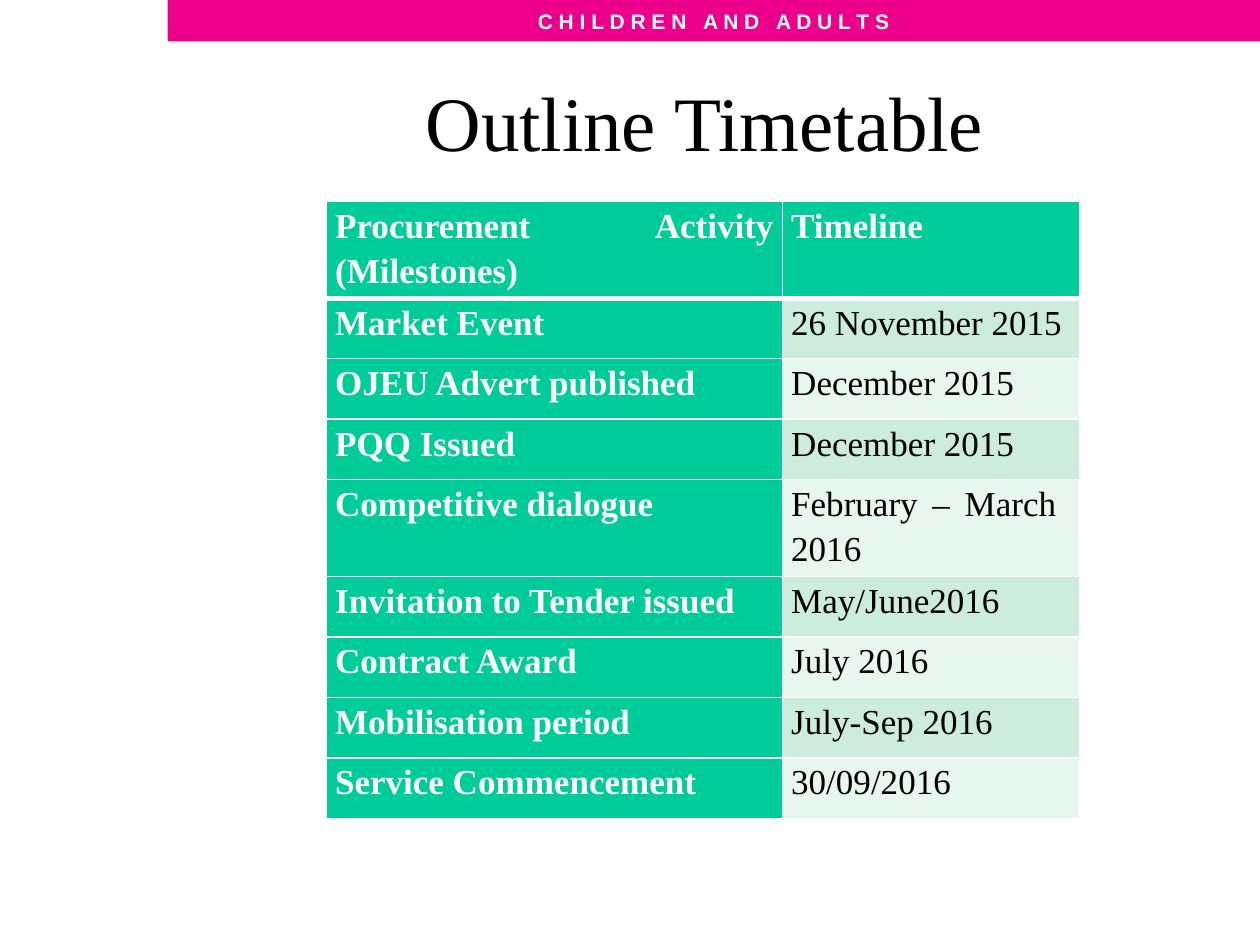
import pptx
import pptx.util
import pptx.dml.color
import pptx.enum.shapes
import pptx.enum.text
import pptx.oxml
import pptx.oxml.ns
from pptx.util import Inches

# Content
BANNER = "C H I L D R E N   A N D   A D U L T S"
TITLE = "Outline Timetable "
ROWS = [
    ("Procurement Activity (Milestones)", "Timeline"),
    ("Market Event", "26 November 2015"),
    ("OJEU Advert published ", "December 2015"),
    ("PQQ Issued", "December 2015"),
    ("Competitive dialogue", "February – March  2016"),
    ("Invitation to Tender issued", "May/June2016"),
    ("Contract Award", "July 2016"),
    ("Mobilisation period", "July-Sep 2016"),
    ("Service Commencement", "30/09/2016"),
]
COLUMN_WIDTHS = (3.62, 2.36)
ROW_HEIGHT = 0.48
PINK, GREEN, WHITE, BLACK = "EC008B", "00CC99", "FFFFFF", "000000"
BANDS = ("E7F6EF", "CCECDE")  # even rows, odd rows
SERIF = "Times New Roman"
ALIGN = pptx.enum.text.PP_ALIGN
MIDDLE = pptx.enum.text.MSO_ANCHOR.MIDDLE


def color(value):
    return pptx.dml.color.RGBColor.from_string(value)


def write(text_frame, text, size, font_name, font_color, alignment, bold=False):
    text_frame.text = text
    paragraph = text_frame.paragraphs[0]
    paragraph.alignment = alignment
    font = paragraph.runs[0].font
    font.size = pptx.util.Pt(size)
    font.name = font_name
    font.bold = bold
    font.color.rgb = color(font_color)
    return paragraph


def set_borders(cell, widths):
    properties = cell._tc.get_or_add_tcPr()
    for index, (side, points) in enumerate(widths.items()):
        line = pptx.oxml.parse_xml(
            f'<a:{side} {pptx.oxml.ns.nsdecls("a")} w="{pptx.util.Pt(points)}">'
            f'<a:solidFill><a:srgbClr val="{WHITE}"/></a:solidFill></a:{side}>')
        properties.insert(index, line)


presentation = pptx.Presentation()
presentation.slide_width, presentation.slide_height = Inches(10), Inches(7.5)
slide = presentation.slides.add_slide(presentation.slide_layouts[6])

# Banner
banner = slide.shapes.add_shape(
    pptx.enum.shapes.MSO_SHAPE.RECTANGLE,
    Inches(1.33), Inches(0), Inches(8.67), Inches(0.33))
banner.shadow.inherit = False
banner.fill.solid()
banner.fill.fore_color.rgb = color(PINK)
banner.line.fill.background()
banner.text_frame.word_wrap = False
banner.text_frame.vertical_anchor = MIDDLE
write(banner.text_frame, BANNER, 12, "Arial", WHITE, ALIGN.CENTER, True)

# Title
title = slide.shapes.add_textbox(Inches(1.38), Inches(0.33), Inches(8.58), Inches(1.25))
title.text_frame.word_wrap = True
title.text_frame.vertical_anchor = MIDDLE
write(title.text_frame, TITLE, 44, SERIF, BLACK, ALIGN.CENTER)

# Timetable
table = slide.shapes.add_table(
    len(ROWS), len(COLUMN_WIDTHS), Inches(2.59), Inches(1.6),
    Inches(sum(COLUMN_WIDTHS)), Inches(ROW_HEIGHT * len(ROWS))).table
for column, width in zip(table.columns, COLUMN_WIDTHS):
    column.width = Inches(width)
for row_index, texts in enumerate(ROWS):
    table.rows[row_index].height = Inches(ROW_HEIGHT)
    for column_index, text in enumerate(texts):
        cell = table.cell(row_index, column_index)
        is_heading = row_index == 0 or column_index == 0
        cell.margin_left = cell.margin_right = Inches(0.07)
        cell.margin_top = cell.margin_bottom = 0
        cell.fill.solid()
        cell.fill.fore_color.rgb = color(GREEN if is_heading else BANDS[row_index % 2])
        paragraph = write(cell.text_frame, text, 20, SERIF,
                          WHITE if is_heading else BLACK, ALIGN.JUSTIFY, is_heading)
        paragraph.line_spacing = 1.15
        set_borders(cell, {"lnL": 1, "lnR": 1,
                           "lnT": 3 if row_index == 1 else 1,
                           "lnB": 3 if row_index == 0 else 1})

presentation.save("out.pptx")
